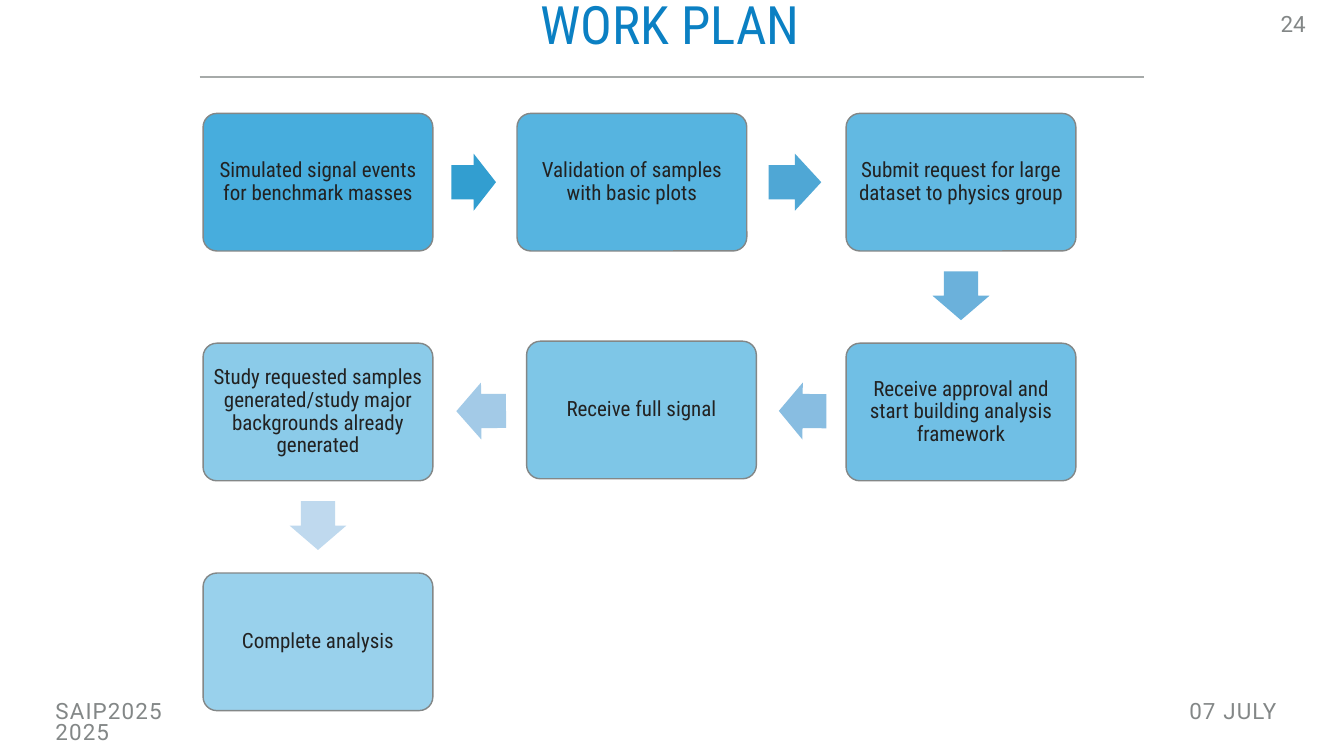
from dataclasses import dataclass
from math import atan2, cos, degrees, hypot, sin

from lxml import etree
from pptx import Presentation
from pptx.dml.color import RGBColor
from pptx.enum.shapes import MSO_CONNECTOR, MSO_SHAPE
from pptx.enum.text import MSO_ANCHOR, PP_ALIGN
from pptx.oxml.ns import qn
from pptx.util import Inches, Pt

ROUNDED = MSO_SHAPE.ROUNDED_RECTANGLE
ARROW = MSO_SHAPE.RIGHT_ARROW
STRAIGHT = MSO_CONNECTOR.STRAIGHT
TOP, MIDDLE, BOTTOM = MSO_ANCHOR.TOP, MSO_ANCHOR.MIDDLE, MSO_ANCHOR.BOTTOM
LEFT, CENTER, RIGHT = PP_ALIGN.LEFT, PP_ALIGN.CENTER, PP_ALIGN.RIGHT


@dataclass(frozen=True)
class Theme:
    heading_font: str = "Roboto Condensed"
    small_font: str = "Roboto"
    title_size: float = 75.6
    step_size: float = 30
    small_size: float = 32
    title: str = "0B80C3"
    ink: str = "222222"
    grey: str = "838787"
    rule: str = "A6AAA9"
    step: str = "34A5DA"
    arrows: tuple = ("329ED0", "4FA7D5", "6BB1DB", "88BDE1", "A3CAE7", "BFD9EE")
    first_alpha: int = 90
    last_alpha: int = 50


T = Theme()
SLIDE_W, SLIDE_H = 26.67, 15
STEP_W, STEP_H = 4.56, 2.73
ROW_PITCH = 4.56
ARROW_H = 1.13
ARROW_SHARE = 0.53  # arrow length as a share of the gap between two steps
ARROW_LAG = 0.015   # shift of an arrow towards the step it leaves

# text, left and top within the flow; the middle of row two sits off the grid
STEPS = [
    ("Simulated signal events for benchmark masses", 0, 0),
    ("Validation of samples with basic plots", 6.23, 0),
    ("Submit request for large dataset to physics group", 12.76, 0),
    ("Receive approval and start building analysis framework", 12.76, ROW_PITCH),
    ("Receive full signal", 6.42, ROW_PITCH - 0.04),
    ("Study requested samples generated/study major backgrounds already generated",
     0, ROW_PITCH),
    ("Complete analysis", 0, 2 * ROW_PITCH),
]


def rgb(code):
    return RGBColor.from_string(code)


def write(shape, text, font, size, color, align, anchor, spacing, margin):
    tf = shape.text_frame
    tf.word_wrap = True
    tf.vertical_anchor = anchor
    tf.margin_left = tf.margin_right = Inches(margin)
    tf.margin_top = tf.margin_bottom = Inches(margin)
    p = tf.paragraphs[0]
    p.text = text
    p.alignment = align
    p.line_spacing = spacing
    p.font.name = font
    p.font.size = Pt(size)
    p.font.color.rgb = rgb(color)
    return p


def add_text(s, box, *args):
    sp = s.shapes.add_textbox(*map(Inches, box))
    return write(sp, *args)


def add_solid(s, kind, box, color):
    sp = s.shapes.add_shape(kind, *map(Inches, box))
    sp.shadow.inherit = False
    sp.fill.solid()
    sp.fill.fore_color.rgb = rgb(color)
    return sp


def add_header(s, box):
    x, y, w, h = box
    add_text(s, (x + 0.14, y, w - 0.36, 1.11), "WORK PLAN", T.heading_font,
             T.title_size, T.title, CENTER, TOP, 0.8, 0.08)
    add_text(s, (x + w - 1.68, y + 0.22, 1, 0.67), "24", T.small_font,
             T.small_size, T.grey, RIGHT, TOP, 0.8, 0.08)
    line = s.shapes.add_connector(STRAIGHT, Inches(3.96), Inches(y + h),
                                  Inches(22.71), Inches(y + h))
    line.line.color.rgb = rgb(T.rule)
    line.line.width = Pt(2)
    etree.SubElement(line._element.spPr, qn("a:effectLst"))


def add_step(s, box, text, alpha):
    sp = add_solid(s, ROUNDED, box, T.step)
    sp.adjustments[0] = 0.1
    sp.line.color.rgb = rgb(T.grey)
    sp.line.width = Pt(2)
    color = sp._element.spPr.find(qn("a:solidFill"))[0]
    etree.SubElement(color, qn("a:alpha"), val=str(round(alpha * 1000)))
    write(sp, text, T.heading_font, T.step_size, T.ink, CENTER, MIDDLE, 0.9, 0.12)


def add_arrow(s, start, end, color):
    """Point an arrow from one step box to the next, inside the gap."""
    (x1, y1), (x2, y2) = [(x + w / 2, y + h / 2) for x, y, w, h in (start, end)]
    dx, dy = x2 - x1, y2 - y1
    gap = hypot(dx, dy) - (STEP_W if abs(dx) > abs(dy) else STEP_H)
    angle = atan2(dy, dx)
    cx = (x1 + x2) / 2 - ARROW_LAG * gap * cos(angle)
    cy = (y1 + y2) / 2 - ARROW_LAG * gap * sin(angle)
    length = ARROW_SHARE * gap
    sp = add_solid(s, ARROW, (cx - length / 2, cy - ARROW_H / 2, length, ARROW_H), color)
    sp.adjustments[0], sp.adjustments[1] = 0.6, 0.5
    sp.rotation = degrees(angle)
    sp.line.fill.background()


def add_flow(s, left, top):
    boxes = [(left + x, top + y, STEP_W, STEP_H) for _, x, y in STEPS]
    fade = (T.first_alpha - T.last_alpha) / (len(STEPS) - 1)
    for i, (box, step) in enumerate(zip(boxes, STEPS)):
        add_step(s, box, step[0], T.first_alpha - i * fade)
    for start, end, color in zip(boxes, boxes[1:], T.arrows):
        add_arrow(s, start, end, color)


def add_footer(s, box):
    p = add_text(s, box, "SAIP2025\t07 JULY 2025", T.small_font, T.small_size,
                 T.grey, LEFT, BOTTOM, 0.8, 0.08)
    pPr = p._p.get_or_add_pPr()
    tabs = etree.Element(qn("a:tabLst"))
    etree.SubElement(tabs, qn("a:tab"), pos=str(Inches(22.5)), algn="l")
    pPr.find(qn("a:defRPr")).addprevious(tabs)
    for r in p.runs:
        r._r.get_or_add_rPr().set("spc", "160")


def main():
    prs = Presentation()
    prs.slide_width, prs.slide_height = Inches(SLIDE_W), Inches(SLIDE_H)
    s = prs.slides.add_slide(prs.slide_layouts[6])
    add_header(s, (0, 0, SLIDE_W, 1.53))
    add_flow(s, 4.03, 2.25)
    add_footer(s, (1.02, 13.82, 24.92, 1.04))
    prs.save("out.pptx")


if __name__ == "__main__":
    main()
